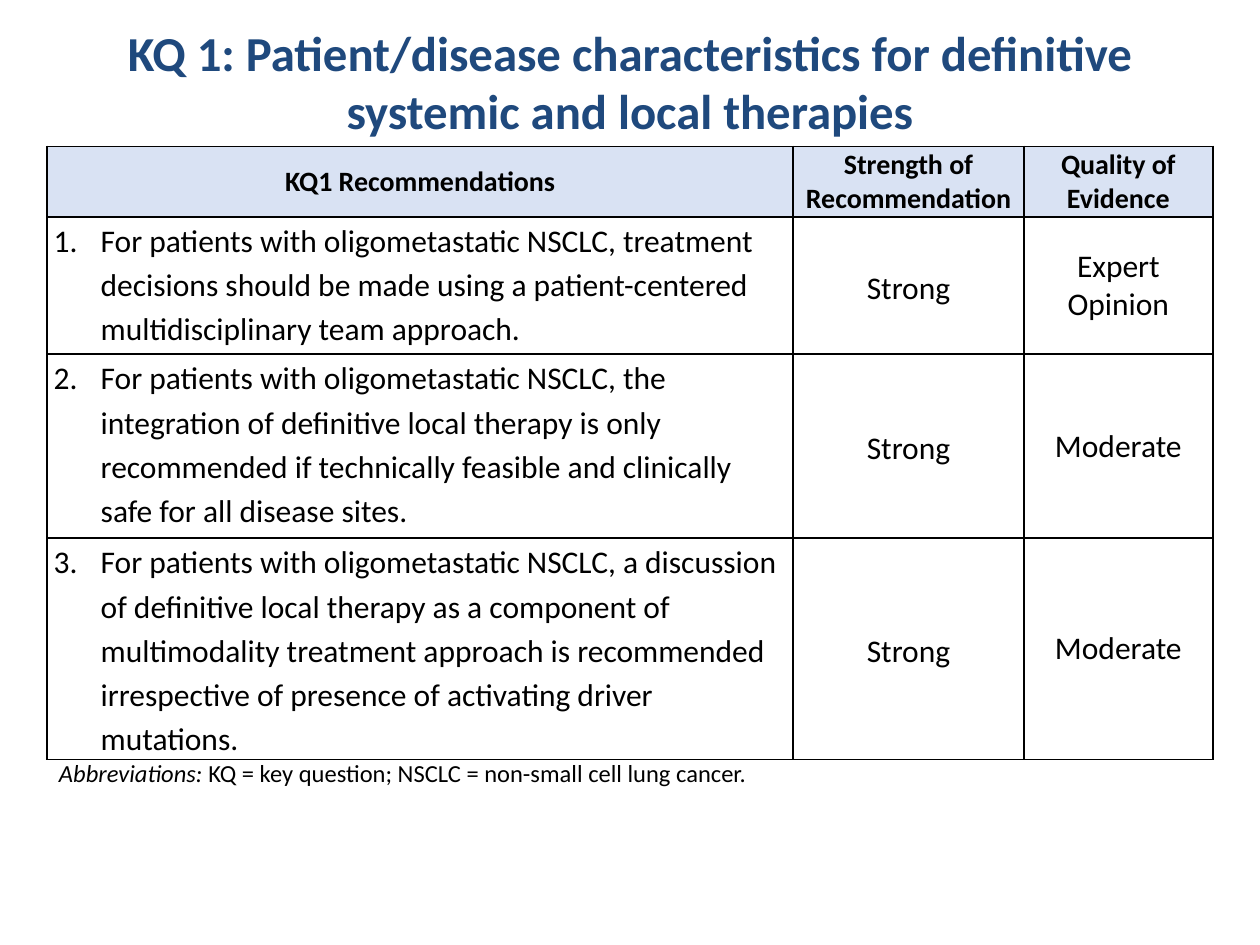
from lxml import etree
from pptx import Presentation
from pptx.dml.color import RGBColor
from pptx.enum.text import MSO_ANCHOR, PP_ALIGN
from pptx.oxml.ns import qn
from pptx.util import Cm, Pt

CENTER, LEFT = PP_ALIGN.CENTER, PP_ALIGN.LEFT
TOP, MIDDLE = MSO_ANCHOR.TOP, MSO_ANCHOR.MIDDLE
BLANK_LAYOUT = 6
BLACK, NAVY, PALE_BLUE = "000000", "1F497D", "D9E2F3"
BORDER_SIDES = ("a:lnL", "a:lnR", "a:lnT", "a:lnB")
COLUMN_WIDTHS = (15.04, 4.65, 3.81)
ROW_HEIGHTS = (1.42, 2.77, 3.71, 4.46)
NUMBER_INDENT = Cm(0.95)
LINE_SPACING = 1.15

TITLE = "KQ 1: Patient/disease characteristics for definitive systemic and local therapies"
HEADINGS = ("KQ1 Recommendations", "Strength of Recommendation", "Quality of Evidence")
RECOMMENDATIONS = (
    ("For patients with oligometastatic NSCLC, treatment decisions should be made "
     "using a patient-centered multidisciplinary team approach.",
     "Strong", "Expert Opinion"),
    ("For patients with oligometastatic NSCLC, the integration of definitive local "
     "therapy is only recommended if technically feasible and clinically safe for "
     "all disease sites.",
     "Strong", "Moderate"),
    ("For patients with oligometastatic NSCLC, a discussion of definitive local "
     "therapy as a component of multimodality treatment approach is recommended "
     "irrespective of presence of activating driver mutations.",
     "Strong", "Moderate"),
)


def rgb(hex_color):
    """Turn a hex string into a colour."""
    return RGBColor.from_string(hex_color)


def set_attributes(target, values):
    """Set each named value on the target."""
    for name, value in values.items():
        setattr(target, name, value)


def add_run(paragraph, text, size, color=BLACK, **styles):
    """Append a Calibri run to the paragraph."""
    run = paragraph.add_run()
    run.text = text
    set_attributes(run.font, {"name": "Calibri", "size": Pt(size), **styles})
    run.font.color.rgb = rgb(color)


def add_text(slide, left, top, width, height, align):
    """Add a wrapping text box and return its first paragraph."""
    frame = slide.shapes.add_textbox(Cm(left), Cm(top), Cm(width), Cm(height)).text_frame
    set_attributes(frame, {"word_wrap": True, "vertical_anchor": TOP})
    paragraph = frame.paragraphs[0]
    paragraph.alignment = align
    return paragraph


def number_paragraph(paragraph, number):
    """Give the paragraph a hanging automatic number."""
    properties = paragraph._p.get_or_add_pPr()
    properties.set("marL", str(NUMBER_INDENT))
    properties.set("indent", str(-NUMBER_INDENT))
    etree.SubElement(properties, qn("a:buFont"), typeface="+mj-lt")
    etree.SubElement(properties, qn("a:buAutoNum"), type="arabicPeriod", startAt=str(number))


def add_borders(cell):
    """Draw a thin black line on every side of the cell."""
    properties = cell._tc.get_or_add_tcPr()
    for position, side in enumerate(BORDER_SIDES):
        line = etree.Element(qn(side), w=str(Pt(1)))
        fill = etree.SubElement(line, qn("a:solidFill"))
        etree.SubElement(fill, qn("a:srgbClr"), val=BLACK)
        properties.insert(position, line)


def fill_cell(cell, text, size, bold=False, number=None, spacing=None, background=None):
    """Write and format one table cell."""
    set_attributes(cell, {
        "margin_left": Cm(0.13), "margin_right": Cm(0.13),
        "margin_top": 0, "margin_bottom": 0,
        "vertical_anchor": TOP if number else MIDDLE,
    })
    paragraph = cell.text_frame.paragraphs[0]
    set_attributes(paragraph, {"alignment": LEFT if number else CENTER, "line_spacing": spacing})
    if number:
        number_paragraph(paragraph, number)
    add_run(paragraph, text, size, bold=bold)
    if background:
        cell.fill.solid()
        cell.fill.fore_color.rgb = rgb(background)
    else:
        cell.fill.background()
    add_borders(cell)


def add_recommendations(slide):
    """Add the table of graded recommendations."""
    table = slide.shapes.add_table(
        len(ROW_HEIGHTS), len(COLUMN_WIDTHS), Cm(0.95), Cm(2.95),
        Cm(sum(COLUMN_WIDTHS)), Cm(sum(ROW_HEIGHTS))).table
    set_attributes(table, {"first_row": False, "horz_banding": False})
    for column, width in zip(table.columns, COLUMN_WIDTHS):
        column.width = Cm(width)
    for row, height in zip(table.rows, ROW_HEIGHTS):
        row.height = Cm(height)
    for column, heading in enumerate(HEADINGS):
        fill_cell(table.cell(0, column), heading, 16, bold=True, background=PALE_BLUE)
    for number, (advice, strength, quality) in enumerate(RECOMMENDATIONS, start=1):
        fill_cell(table.cell(number, 0), advice, 18, number=number, spacing=LINE_SPACING)
        fill_cell(table.cell(number, 1), strength, 18, spacing=LINE_SPACING)
        fill_cell(table.cell(number, 2), quality, 18)


def main():
    """Build the slide and save it."""
    deck = Presentation()
    set_attributes(deck, {"slide_width": Cm(25.4), "slide_height": Cm(19.05)})
    slide = deck.slides.add_slide(deck.slide_layouts[BLANK_LAYOUT])
    title = add_text(slide, 0.95, 0.33, 23.5, 2.95, CENTER)
    add_run(title, TITLE, 27.9, NAVY, bold=True)
    add_recommendations(slide)
    abbreviations = add_text(slide, 0.79, 15.16, 23.7, 1.63, LEFT)
    abbreviations._p.get_or_add_pPr().set("marL", str(Cm(0.15)))
    add_run(abbreviations, "Abbreviations: ", 14, italic=True)
    add_run(abbreviations, "KQ = key question; NSCLC = non-small cell lung cancer.", 14)
    deck.save("out.pptx")


if __name__ == "__main__":
    main()
